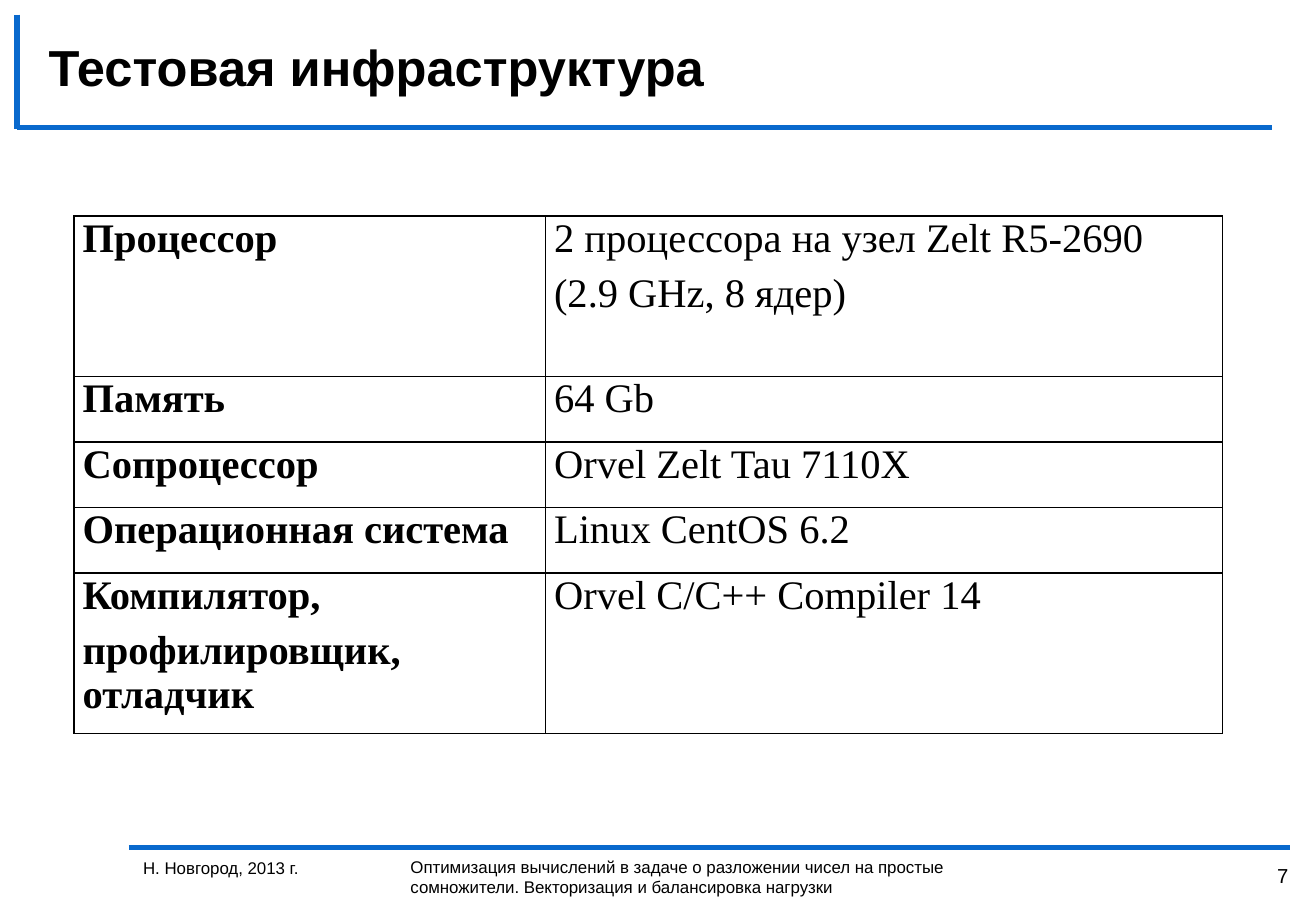
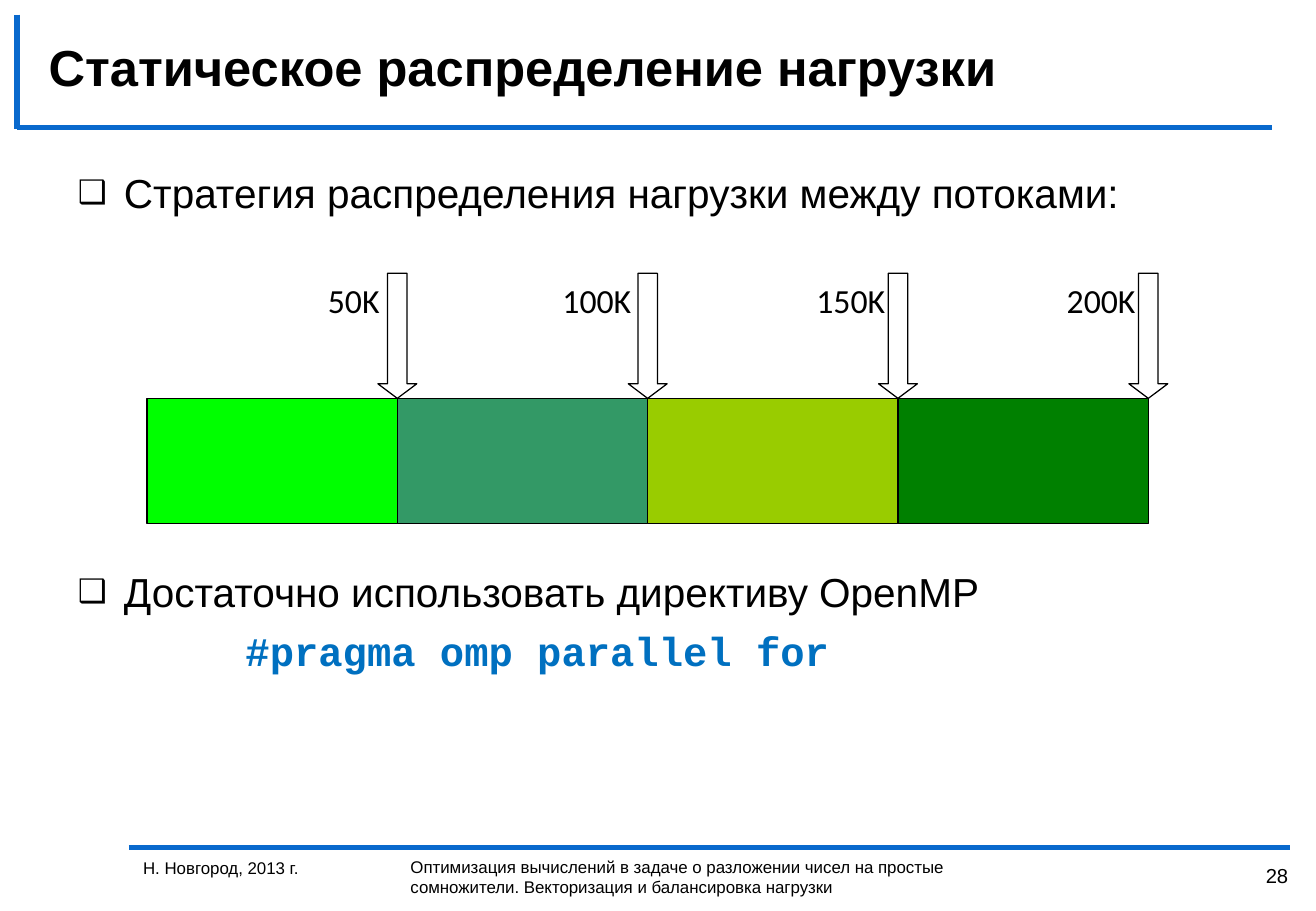
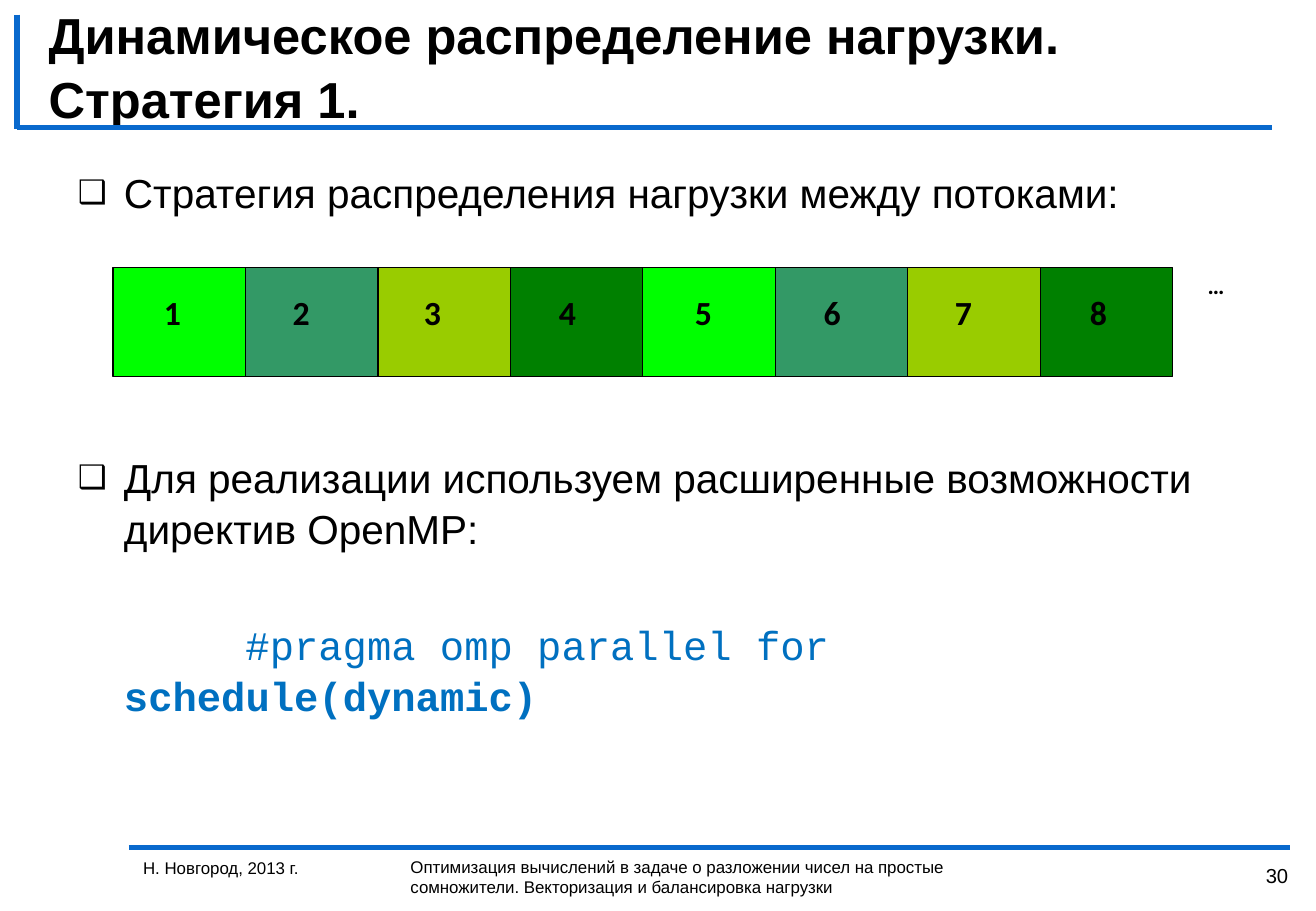
from dataclasses import dataclass

import pptx
import pptx.dml.color
import pptx.enum.shapes
import pptx.enum.text
import pptx.oxml
import pptx.oxml.ns
import pptx.util
from pptx.util import Inches

SHAPE = pptx.enum.shapes.MSO_SHAPE
ALIGN = pptx.enum.text.PP_ALIGN
ANCHOR = pptx.enum.text.MSO_ANCHOR


@dataclass(frozen=True)
class Theme:
    accent: str = "0969CD"
    ink: str = "000000"
    paper: str = "FFFFFF"
    code: str = "0070C0"
    threads: tuple = ("00FF00", "339966", "99CC00", "008000")
    sans: str = "Arial"
    label_font: str = "Calibri"
    table_font: str = "Times New Roman"
    mono: str = "Courier New"
    title_size: int = 30
    body_size: int = 24
    label_size: int = 20
    small_label_size: int = 14
    number_size: int = 12
    footer_size: int = 10
    rule_width: float = 3
    outline_width: float = 0.75
    line_spacing: float = 1.05
    para_gap: float = 4.8
    line_pitch: float = 33.6


THEME = Theme()
PLACE = "Н. Новгород, 2013 г."
TALK = ("Оптимизация вычислений в задаче о разложении чисел на простые "
        "сомножители. Векторизация и балансировка нагрузки")


def rgb(value):
    return pptx.dml.color.RGBColor.from_string(value)


def add_xml(parent, tag, **attributes):
    child = pptx.oxml.parse_xml(f"<{tag} {pptx.oxml.ns.nsdecls('a')}/>")
    for name, value in attributes.items():
        child.set(name, str(value))
    parent.append(child)
    return child


def write(para, text, font=THEME.sans, size=THEME.body_size,
          color=THEME.ink, bold=False, align=None):
    """Append text to a paragraph; a newline becomes a line break."""
    if align is not None:
        para.alignment = align
    for index, line in enumerate(text.split("\n")):
        if index:
            para.add_line_break()
        span = para.add_run()
        span.text = line
        span.font.name = font
        span.font.size = pptx.util.Pt(size)
        span.font.bold = bold
        span.font.color.rgb = rgb(color)


class SlideWriter:
    """Holds the theme, the deck and the slide being written."""

    def __init__(self, deck, theme):
        self.deck = deck
        self.theme = theme
        self.page = None
        self.body_frame = None

    def start(self, title, number, layout="Title and Content"):
        self.page = self.deck.slides.add_slide(
            self.deck.slide_layouts.get_by_name(layout))
        self.body_frame = None
        self.rule(1.06, 6.98, 10.62, 6.98)
        self.rule(0.14, 1.05, 10.47, 1.05)
        self.rule(0.14, 0.12, 0.14, 1.06)
        small = self.theme.footer_size
        self.text(10.15, 7.06, 0.55, 0.31, str(number),
                  size=self.theme.number_size, align=ALIGN.RIGHT)
        self.text(1.08, 7.01, 2.1, 0.47, PLACE, size=small)
        self.text(3.28, 7, 5.26, 0.44, TALK, size=small)
        frame = self.placeholder(0, 0.3, 0.23, 9.93, 0.61)
        frame.vertical_anchor = ANCHOR.MIDDLE
        para = frame.paragraphs[0]
        para.line_spacing = self.theme.line_spacing
        write(para, title, size=self.theme.title_size, bold=True, align=ALIGN.LEFT)

    def placeholder(self, index, left, top, width, height):
        box = self.page.placeholders[index]
        box.left, box.top = Inches(left), Inches(top)
        box.width, box.height = Inches(width), Inches(height)
        frame = box.text_frame
        frame.auto_size = pptx.enum.text.MSO_AUTO_SIZE.NONE
        frame.word_wrap = True
        return frame

    def rule(self, x1, y1, x2, y2):
        line = self.page.shapes.add_connector(
            pptx.enum.shapes.MSO_CONNECTOR.STRAIGHT,
            Inches(x1), Inches(y1), Inches(x2), Inches(y2))
        line.line.color.rgb = rgb(self.theme.accent)
        line.line.width = pptx.util.Pt(self.theme.rule_width)
        add_xml(line._element.spPr, "a:effectLst")

    def text(self, left, top, width, height, text, **style):
        box = self.page.shapes.add_textbox(
            Inches(left), Inches(top), Inches(width), Inches(height))
        box.text_frame.word_wrap = True
        write(box.text_frame.paragraphs[0], text, **style)

    def shape(self, kind, left, top, width, height, fill, outlined=True):
        box = self.page.shapes.add_shape(
            kind, Inches(left), Inches(top), Inches(width), Inches(height))
        box.shadow.inherit = False
        box.fill.solid()
        box.fill.fore_color.rgb = rgb(fill)
        if outlined:
            box.line.color.rgb = rgb(self.theme.ink)
            box.line.width = pptx.util.Pt(self.theme.outline_width)
        else:
            box.line.fill.background()
        return box

    def label(self, left, top, width, height, text, **style):
        """White borderless rectangle with text at its top left."""
        box = self.shape(SHAPE.RECTANGLE, left, top, width, height,
                         self.theme.paper, outlined=False)
        frame = box.text_frame
        frame.word_wrap = True
        frame.margin_right = 0
        frame.vertical_anchor = ANCHOR.TOP
        write(frame.paragraphs[0], text, font=self.theme.label_font,
              align=ALIGN.LEFT, **style)

    def arrow(self, center, top, width, height):
        box = self.shape(SHAPE.DOWN_ARROW, center - width / 2, top,
                         width, height, self.theme.paper)
        box.adjustments[0] = 0.5
        box.adjustments[1] = 0.375

    def blocks(self, left, top, width, height, count):
        """Row of adjoining blocks in the repeating thread colours."""
        colors = self.theme.threads
        for index in range(count):
            self.shape(SHAPE.RECTANGLE, left + index * width, top, width, height,
                       colors[index % len(colors)])

    def body_para(self, first_line, skipped_lines=0):
        if self.body_frame is None:
            self.body_frame = self.placeholder(1, 0.54, 1.31, 9.75, 5.43)
            para = self.body_frame.paragraphs[0]
            gap = 0
        else:
            para = self.body_frame.add_paragraph()
            gap = self.theme.para_gap + skipped_lines * self.theme.line_pitch
        properties = para._p.get_or_add_pPr()
        properties.set("marL", str(Inches(0.38)))
        properties.set("indent", str(Inches(first_line)))
        para.space_before = pptx.util.Pt(gap)
        para.line_spacing = self.theme.line_spacing
        return para, properties

    def bullet(self, text, skipped_lines=0):
        para, properties = self.body_para(-0.38, skipped_lines)
        add_xml(properties, "a:buSzPct", val=80000)
        add_xml(properties, "a:buFont", typeface=self.theme.sans)
        add_xml(properties, "a:buChar", char="❑")
        write(para, text)

    def code(self, *parts, skipped_lines=0):
        """Code line given as (text, bold) parts."""
        para, properties = self.body_para(1, skipped_lines)
        add_xml(properties, "a:buNone")
        for text, bold in parts:
            write(para, text, font=self.theme.mono, color=self.theme.code, bold=bold)

    def table(self, left, top, widths, heights, rows):
        grid = self.page.shapes.add_table(
            len(rows), len(widths), Inches(left), Inches(top),
            Inches(sum(widths)), Inches(sum(heights))).table
        grid.first_row = grid.horz_banding = False
        for column, width in zip(grid.columns, widths):
            column.width = Inches(width)
        for row, height, texts in zip(grid.rows, heights, rows):
            row.height = Inches(height)
            for index, (cell, text) in enumerate(zip(row.cells, texts)):
                self.cell(cell, text, bold=index == 0)

    def cell(self, cell, text, bold):
        cell.margin_left = cell.margin_right = Inches(0.07)
        cell.margin_top = cell.margin_bottom = 0
        properties = cell._tc.get_or_add_tcPr()
        for side in ("a:lnL", "a:lnR", "a:lnT", "a:lnB"):
            border = add_xml(properties, side, w=pptx.util.Pt(1))
            add_xml(add_xml(border, "a:solidFill"), "a:srgbClr", val=self.theme.ink)
        cell.fill.background()
        frame = cell.text_frame
        for index, line in enumerate(text.split("\n")):
            para = frame.add_paragraph() if index else frame.paragraphs[0]
            para.space_before = pptx.util.Pt(3 if index else 0)
            para.space_after = pptx.util.Pt(3)
            write(para, line, font=self.theme.table_font, bold=bold,
                  align=ALIGN.JUSTIFY)


def infrastructure(slide):
    slide.start("Тестовая инфраструктура", 7, layout="Title Only")
    slide.table(0.61, 1.78, (3.88, 5.57), (1.32, 0.54, 0.54, 0.54, 1.32), (
        ("Процессор", "2 процессора на узел Zelt R5-2690\n(2.9 GHz, 8 ядер)"),
        ("Память", "64 Gb"),
        ("Сопроцессор", "Orvel Zelt Tau 7110X"),
        ("Операционная система", "Linux CentOS 6.2"),
        ("Компилятор,\nпрофилировщик, отладчик", "Orvel C/C++ Compiler 14"),
    ))


def static_load(slide):
    slide.start("Статическое распределение нагрузки", 28)
    slide.bullet("Стратегия распределения нагрузки между потоками:")
    slide.bullet("Достаточно использовать директиву OpenMP", skipped_lines=6)
    slide.code(("#pragma omp parallel for", True))
    left, width, height, arrow_top = 1.21, 2.06, 1.03, 2.25
    slide.blocks(left, arrow_top + height, width, height, 4)
    limits = (("50K", 2.6, 0.63), ("100K", 4.53, 0.79),
              ("150K", 6.62, 0.79), ("200K", 8.68, 0.79))
    for index, (limit, label_left, label_width) in enumerate(limits, 1):
        slide.label(label_left, arrow_top, label_width, 0.68, limit,
                    size=slide.theme.label_size)
        slide.arrow(left + index * width, arrow_top, 0.32, height)


def dynamic_load(slide):
    slide.start("Динамическое распределение нагрузки.\nСтратегия 1.", 30)
    slide.bullet("Стратегия распределения нагрузки между потоками:")
    slide.bullet("Для реализации используем расширенные возможности "
                 "директив OpenMP:", skipped_lines=4)
    slide.code(("#pragma omp parallel for ", False), ("schedule(dynamic)", True),
               skipped_lines=1)
    slide.blocks(0.93, 2.2, 1.09, 0.9, 8)
    digit_lefts = (1.25, 2.31, 3.39, 4.5)
    for index in range(8):
        turn, thread = divmod(index, len(digit_lefts))
        slide.text(digit_lefts[thread] + 4.37 * turn, 2.35, 0.62, 0.63,
                   str(index + 1), font=slide.theme.label_font,
                   size=slide.theme.label_size, bold=True)
    slide.label(9.84, 2.18, 0.62, 0.94, "…",
                size=slide.theme.small_label_size, bold=True)


def main():
    deck = pptx.Presentation()
    deck.slide_width, deck.slide_height = Inches(10.83), Inches(7.5)
    slide = SlideWriter(deck, THEME)
    for build in (infrastructure, static_load, dynamic_load):
        build(slide)
    deck.save("out.pptx")


if __name__ == "__main__":
    main()
